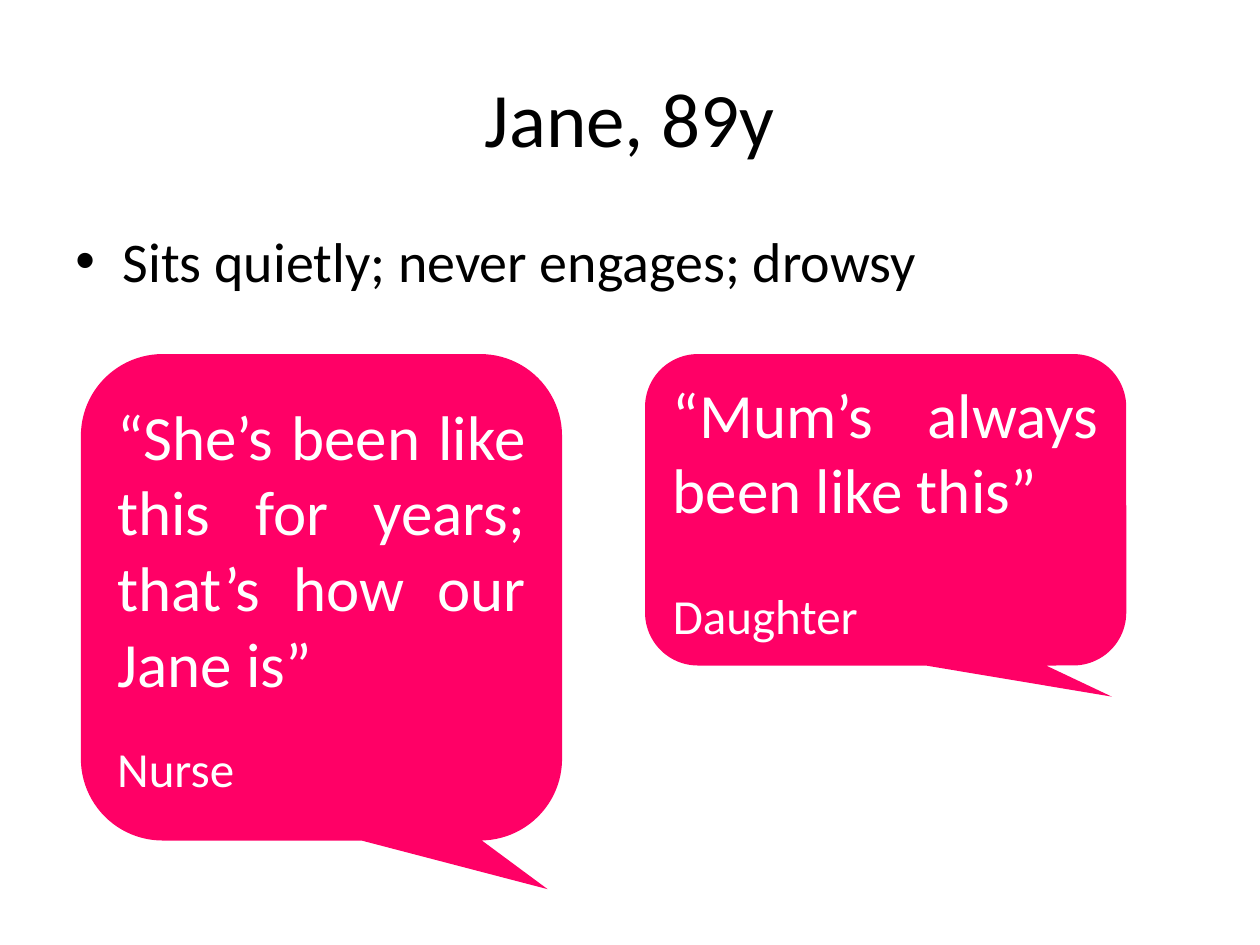
import dataclasses

import lxml.etree
import pptx
import pptx.dml.color
import pptx.enum.shapes
import pptx.enum.text
import pptx.oxml.ns
import pptx.slide
import pptx.text.text
import pptx.util

Pt = pptx.util.Pt
Align = pptx.enum.text.PP_ALIGN
Anchor = pptx.enum.text.MSO_ANCHOR


@dataclasses.dataclass(frozen=True)
class Theme:
    font: str = "Calibri"
    ink: str = "000000"
    pink: str = "FF0066"
    white: str = "FFFFFF"
    title: int = 44
    body: int = 32
    quote: int = 36
    name: int = 28


@dataclasses.dataclass(frozen=True)
class Bubble:
    left: float
    height: float
    quote: str
    name: str
    gap: float


THEME = Theme()
TOP = 202.3
WIDTH = 275
TAIL = (0.47, 0.6, 0.17)
INDENT = 27
BUBBLES = (
    Bubble(46.2, 278, "“She’s been like this for years; that’s how our Jane is”", "Nurse", 22),
    Bubble(368.6, 178, "“Mum’s always been like this”", "Daughter", 34),
)


def style(para: pptx.text.text._Paragraph, size: int, color: str, align: Align) -> None:
    para.alignment = align
    for run in para.runs:
        run.font.name = THEME.font
        run.font.size = Pt(size)
        run.font.color.rgb = pptx.dml.color.RGBColor.from_string(color)


def add_text(slide: pptx.slide.Slide, text: str, top: float, height: float,
             size: int, align: Align, anchor: Anchor) -> pptx.text.text._Paragraph:
    box = slide.shapes.add_textbox(Pt(36), Pt(top), Pt(648), Pt(height))
    frame = box.text_frame
    frame.word_wrap = True
    frame.vertical_anchor = anchor
    frame.text = text
    para = frame.paragraphs[0]
    style(para, size, THEME.ink, align)
    return para


def add_bullet(para: pptx.text.text._Paragraph) -> None:
    props = para._p.get_or_add_pPr()
    props.set("marL", str(Pt(INDENT)))
    props.set("indent", str(-Pt(INDENT)))
    qn = pptx.oxml.ns.qn
    lxml.etree.SubElement(props, qn("a:buFont"), typeface="Arial")
    lxml.etree.SubElement(props, qn("a:buChar"), char="•")


def add_bubble(slide: pptx.slide.Slide, bubble: Bubble) -> None:
    shape = slide.shapes.add_shape(
        pptx.enum.shapes.MSO_SHAPE.ROUNDED_RECTANGULAR_CALLOUT,
        Pt(bubble.left), Pt(TOP), Pt(WIDTH), Pt(bubble.height))
    for index, value in enumerate(TAIL):
        shape.adjustments[index] = value
    shape.shadow.inherit = False
    shape.fill.solid()
    shape.fill.fore_color.rgb = pptx.dml.color.RGBColor.from_string(THEME.pink)
    shape.line.fill.background()
    frame = shape.text_frame
    frame.word_wrap = True
    frame.vertical_anchor = Anchor.MIDDLE
    frame.text = f"{bubble.quote}\n{bubble.name}"
    quote, name = frame.paragraphs
    style(quote, THEME.quote, THEME.white, Align.JUSTIFY)
    style(name, THEME.name, THEME.white, Align.JUSTIFY)
    name.space_before = Pt(bubble.gap)


def main() -> None:
    deck = pptx.Presentation()
    deck.slide_width, deck.slide_height = Pt(720), Pt(540)
    slide = deck.slides.add_slide(deck.slide_layouts[6])
    add_text(slide, "Jane, 89y", 21.6, 90, THEME.title, Align.CENTER, Anchor.MIDDLE)
    fact = add_text(slide, "Sits quietly; never engages; drowsy", 126, 64.8,
                    THEME.body, Align.LEFT, Anchor.TOP)
    add_bullet(fact)
    for bubble in BUBBLES:
        add_bubble(slide, bubble)
    deck.save("out.pptx")


if __name__ == "__main__":
    main()
